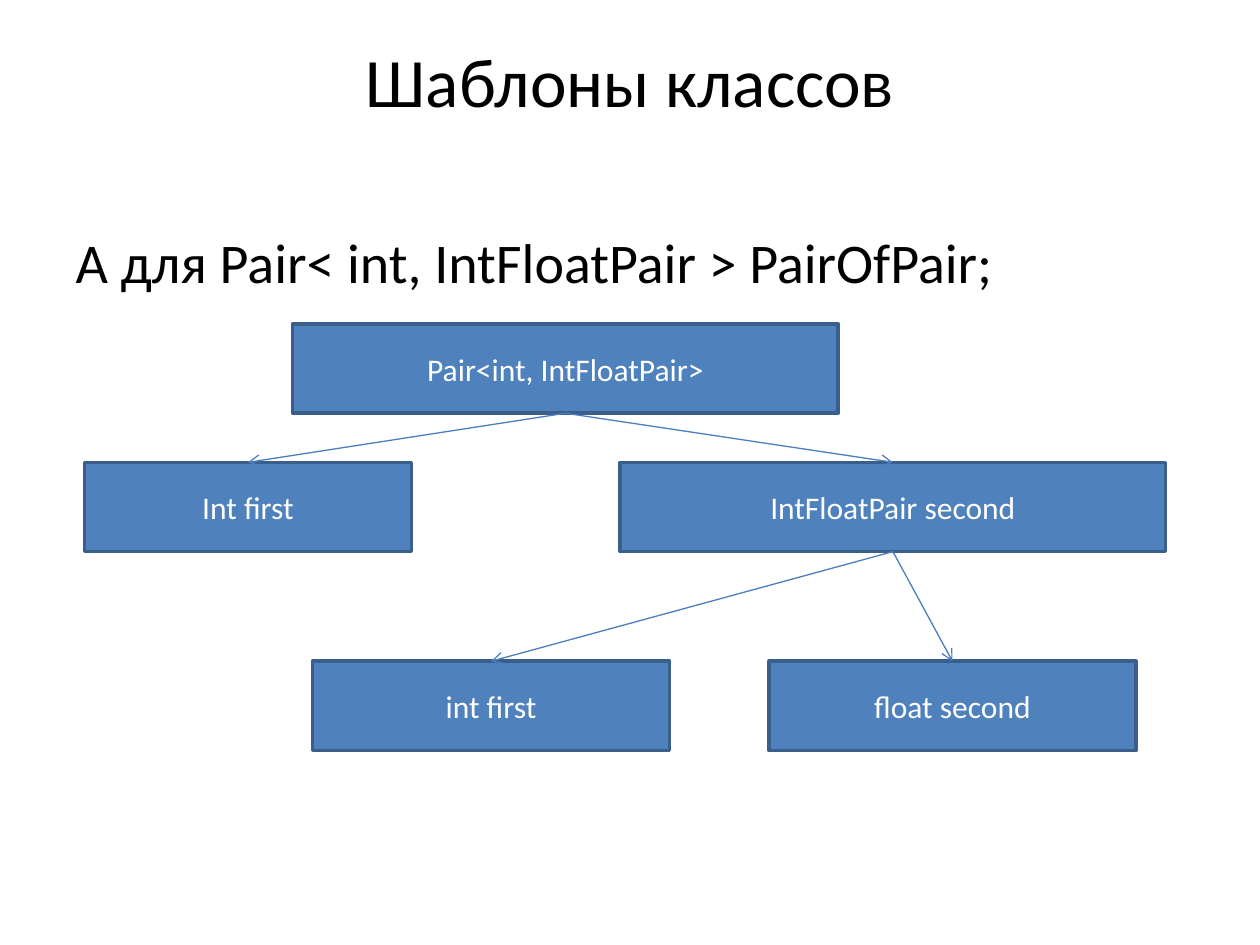
from dataclasses import dataclass

from lxml.etree import SubElement
from pptx import Presentation
from pptx.dml.color import RGBColor
from pptx.enum.shapes import MSO_CONNECTOR, MSO_SHAPE
from pptx.enum.text import MSO_ANCHOR, PP_ALIGN
from pptx.oxml.ns import qn
from pptx.util import Cm, Pt


@dataclass(frozen=True)
class Theme:
    font: str = "Calibri"
    text: RGBColor = RGBColor(0, 0, 0)
    box_text: RGBColor = RGBColor(255, 255, 255)
    box_fill: RGBColor = RGBColor(0x4F, 0x81, 0xBD)
    box_line: RGBColor = RGBColor(0x3A, 0x5F, 0x8C)
    arrow: RGBColor = RGBColor(0x4B, 0x7E, 0xBC)
    title_size: float = 39.6
    body_size: float = 32
    box_size: float = 18


theme = Theme()


def write_text(shape, text, *, size, color, align, anchor):
    frame = shape.text_frame
    frame.word_wrap = True
    frame.vertical_anchor = anchor
    paragraph = frame.paragraphs[0]
    paragraph.alignment = align
    run = paragraph.add_run()
    run.text = text
    run.font.name = theme.font
    run.font.size = Pt(size)
    run.font.color.rgb = color
    return paragraph


presentation = Presentation()
presentation.slide_width = Cm(25.4)
presentation.slide_height = Cm(19.05)
slide = presentation.slides.add_slide(presentation.slide_layouts[1])

title = slide.shapes.title
title.left, title.top, title.width, title.height = Cm(1.27), Cm(0.76), Cm(22.86), Cm(3.18)
title.text_frame.margin_top = 0
write_text(title, "Шаблоны классов", size=theme.title_size, color=theme.text,
           align=PP_ALIGN.CENTER, anchor=MSO_ANCHOR.TOP)

body = slide.placeholders[1]
body.left, body.top, body.width, body.height = Cm(1.27), Cm(4.45), Cm(22.86), Cm(12.57)
paragraph = write_text(body, "А для Pair< int, IntFloatPair > PairOfPair;", size=theme.body_size,
                       color=theme.text, align=PP_ALIGN.LEFT, anchor=MSO_ANCHOR.TOP)
properties = paragraph._p.get_or_add_pPr()
properties.set("marL", str(Cm(0.95)))
properties.set("indent", str(Cm(-0.95)))
SubElement(properties, qn("a:buNone"))

box_height = Cm(1.8)
root_top, member_top, nested_top = Cm(6.53), Cm(9.32), Cm(13.33)
nodes = {
    "pair": ("Pair<int, IntFloatPair>", Cm(5.9), root_top, Cm(11)),
    "second": ("IntFloatPair second", Cm(12.5), member_top, Cm(11)),
    "first": ("Int first", Cm(1.7), member_top, Cm(6.6)),
    "nested_first": ("int first", Cm(6.3), nested_top, Cm(7.2)),
    "nested_second": ("float second", Cm(15.5), nested_top, Cm(7.4)),
}
boxes = {}
for name, (text, left, top, width) in nodes.items():
    box = slide.shapes.add_shape(MSO_SHAPE.RECTANGLE, left, top, width, box_height)
    box.shadow.inherit = False
    box.fill.solid()
    box.fill.fore_color.rgb = theme.box_fill
    box.line.color.rgb = theme.box_line
    box.line.width = Pt(2)
    write_text(box, text, size=theme.box_size, color=theme.box_text,
               align=PP_ALIGN.CENTER, anchor=MSO_ANCHOR.MIDDLE)
    boxes[name] = box

bottom_site, top_site = 2, 0
links = [("pair", "first"), ("pair", "second"),
         ("second", "nested_first"), ("second", "nested_second")]
for parent, child in links:
    connector = slide.shapes.add_connector(MSO_CONNECTOR.STRAIGHT, 0, 0, 0, 0)
    connector.begin_connect(boxes[parent], bottom_site)
    connector.end_connect(boxes[child], top_site)
    connector.line.color.rgb = theme.arrow
    connector.line.width = Pt(0.75)
    SubElement(connector.line._get_or_add_ln(), qn("a:tailEnd"), type="arrow")
    SubElement(connector._element.spPr, qn("a:effectLst"))

presentation.save("out.pptx")
